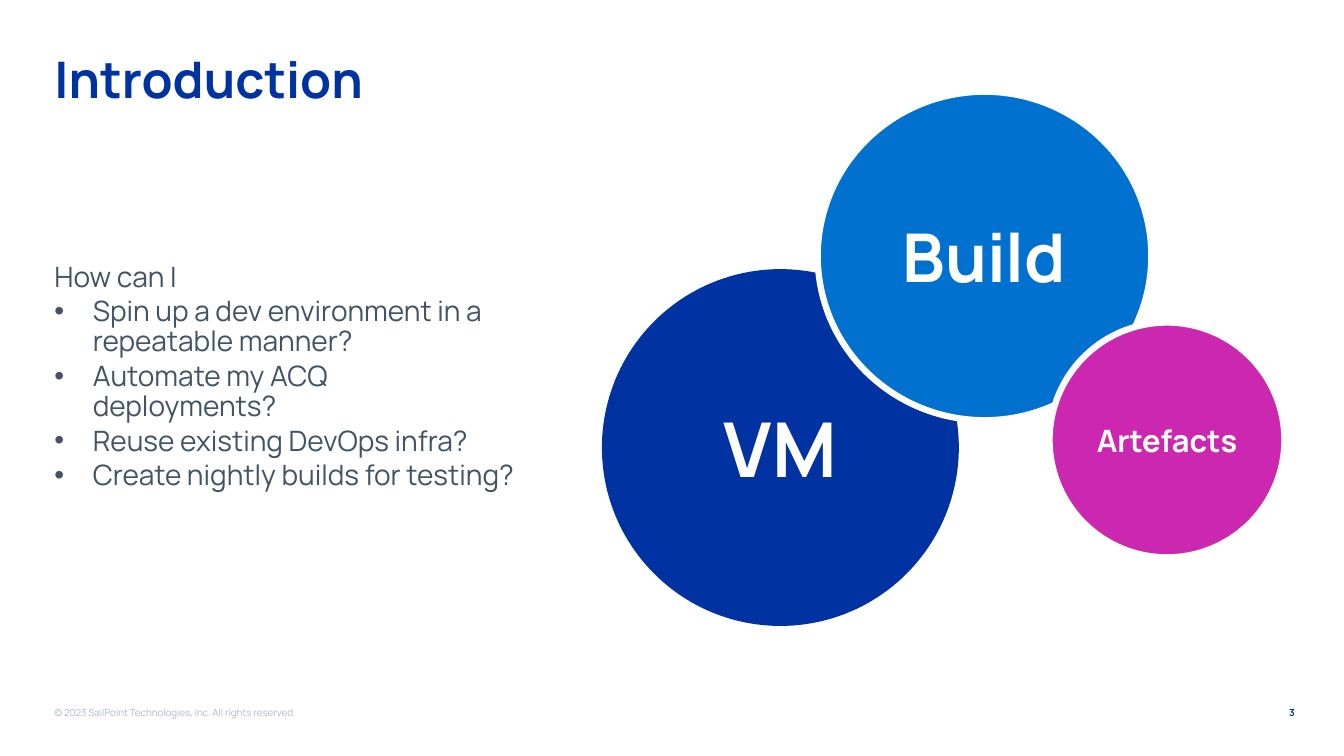
import pptx
import pptx.util
import pptx.dml.color
import pptx.enum.shapes
import pptx.enum.text
import pptx.oxml.ns
import lxml.etree

Inches = pptx.util.Inches
Pt = pptx.util.Pt
ALIGN = pptx.enum.text.PP_ALIGN
ANCHOR = pptx.enum.text.MSO_ANCHOR

COLORS = {
    "navy": "0033A1",
    "blue": "0071CE",
    "magenta": "CC27B0",
    "slate": "415364",
    "mist": "ABBAC9",
    "white": "FFFFFF",
}
FONT = "Manrope"
LEFT = 0.44
COLUMN_WIDTH = 4.77
HANGING_INDENT = 0.38

TITLE = "Introduction"
LEAD_IN = "How can I"
QUESTIONS = [
    "Spin up a dev environment in a repeatable manner?",
    "Automate my ACQ deployments?",
    "Reuse existing DevOps infra?",
    "Create nightly builds for testing?",
]
CIRCLES = [
    ("VM", (5.97, 2.67, 3.54, 3.54), "navy", 54, False),
    ("Build", (8.11, 0.91, 3.31, 3.26), "blue", 48, True),
    ("Artefacts", (10.41, 3.2, 2.33, 2.33), "magenta", 22, True),
]
FOOTERS = [
    ("© 2023 SailPoint Technologies, Inc. All rights reserved.",
     (LEFT, 6.94, 4.24, 0.25), "mist", False, ALIGN.LEFT),
    ("3", (12.07, 6.94, 0.87, 0.25), "navy", True, ALIGN.RIGHT),
]


def rgb(name):
    return pptx.dml.color.RGBColor.from_string(COLORS[name])


def place(shape, box):
    shape.left, shape.top, shape.width, shape.height = map(Inches, box)


def style(paragraph, size, color, bold=False, align=ALIGN.LEFT):
    paragraph.alignment = align
    for run in paragraph.runs:
        run.font.name = FONT
        run.font.size = Pt(size)
        run.font.bold = bold
        run.font.color.rgb = rgb(color)


def set_bullet(paragraph, indent, bullet):
    properties = paragraph._p.get_or_add_pPr()
    properties.set("marL", str(Inches(indent)))
    properties.set("indent", str(-Inches(indent)))
    tag = "a:buChar" if bullet else "a:buNone"
    mark = lxml.etree.SubElement(properties, pptx.oxml.ns.qn(tag))
    if bullet:
        mark.set("char", bullet)


def add_title(slide):
    title = slide.shapes.title
    place(title, (LEFT, 0.5, COLUMN_WIDTH, 1.75))
    frame = title.text_frame
    frame.text = TITLE
    frame.auto_size = pptx.enum.text.MSO_AUTO_SIZE.NONE
    frame.vertical_anchor = ANCHOR.TOP
    frame.paragraphs[0].line_spacing = 0.9
    style(frame.paragraphs[0], 36, "navy", True)


def add_questions(slide):
    body = slide.placeholders[1]
    place(body, (LEFT, 2.56, COLUMN_WIDTH, 3.86))
    frame = body.text_frame
    frame.text = "\n".join([LEAD_IN] + QUESTIONS)
    frame.auto_size = pptx.enum.text.MSO_AUTO_SIZE.NONE
    frame.vertical_anchor = ANCHOR.TOP
    for index, paragraph in enumerate(frame.paragraphs):
        if index:
            set_bullet(paragraph, HANGING_INDENT, "•")
        else:
            set_bullet(paragraph, 0, None)
        paragraph.line_spacing = 0.9
        paragraph.space_before = Pt(0)
        paragraph.space_after = Pt(3)
        style(paragraph, 20, "slate")


def add_circle(slide, label, box, color, size, outlined):
    circle = slide.shapes.add_shape(
        pptx.enum.shapes.MSO_SHAPE.OVAL, *map(Inches, box))
    circle.shadow.inherit = False
    circle.fill.solid()
    circle.fill.fore_color.rgb = rgb(color)
    if outlined:
        circle.line.color.rgb = rgb("white")
        circle.line.width = Pt(4.5)
    else:
        circle.line.fill.background()
    frame = circle.text_frame
    frame.text = label
    frame.word_wrap = False
    frame.vertical_anchor = ANCHOR.MIDDLE
    style(frame.paragraphs[0], size, "white", True, ALIGN.CENTER)


def add_footer(slide, text, box, color, bold, align):
    footer = slide.shapes.add_textbox(*map(Inches, box))
    frame = footer.text_frame
    frame.text = text
    frame.word_wrap = True
    frame.vertical_anchor = ANCHOR.MIDDLE
    style(frame.paragraphs[0], 7, color, bold, align)


def main():
    deck = pptx.Presentation()
    deck.slide_width = Inches(13.33)
    deck.slide_height = Inches(7.5)
    slide = deck.slides.add_slide(deck.slide_layouts[1])
    add_title(slide)
    add_questions(slide)
    for circle in CIRCLES:
        add_circle(slide, *circle)
    for footer in FOOTERS:
        add_footer(slide, *footer)
    deck.save("out.pptx")


if __name__ == "__main__":
    main()
